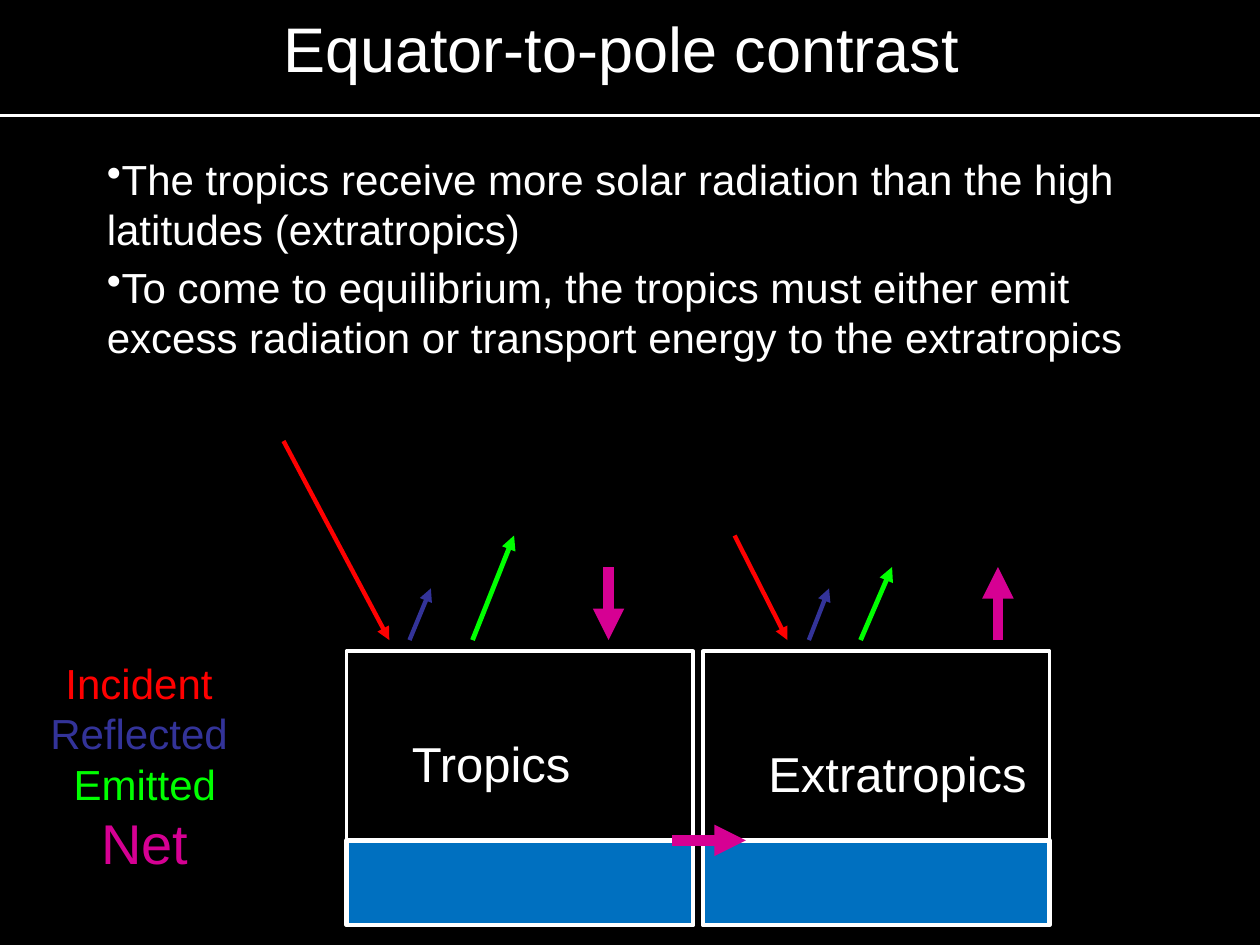
from lxml import etree
from pptx import Presentation, util as u
from pptx.dml.color import RGBColor
from pptx.enum import shapes, text
from pptx.oxml.ns import qn

COLORS = {
    "background": "000000", "white": "FFFFFF", "ocean": "0070C0",
    "incident": "FF0000", "reflected": "333399", "emitted": "00FF00", "net": "D60093",
}
FONT = "Arial"


def rgb(name):
    return RGBColor.from_string(COLORS[name])


def add_text(page, box, lines, align=text.PP_ALIGN.LEFT, anchor=text.MSO_ANCHOR.TOP,
             wrap=True, gap=0, bullet=None):
    """Place lines given as (wording, size, color) in the box."""
    frame = page.shapes.add_textbox(*map(u.Inches, box)).text_frame
    frame.word_wrap = wrap
    frame.vertical_anchor = anchor
    for index, (wording, size, color) in enumerate(lines):
        para = frame.add_paragraph() if index else frame.paragraphs[0]
        if bullet:
            props = para._p.get_or_add_pPr()
            props.set("marL", "0")
            props.set("indent", "0")
            etree.SubElement(props, qn("a:buChar")).set("char", bullet)
        para.alignment = align
        para.space_before = u.Pt(gap if index else 0)
        span = para.add_run()
        span.text = wording
        span.font.name = FONT
        span.font.size = u.Pt(size)
        span.font.color.rgb = rgb(color)


def add_line(page, start, end, color, width, arrow=True):
    line = page.shapes.add_connector(shapes.MSO_CONNECTOR.STRAIGHT,
                                     *map(u.Inches, (*start, *end)))
    line.line.color.rgb = rgb(color)
    line.line.width = u.Pt(width)
    if arrow:
        etree.SubElement(line.line._get_or_add_ln(), qn("a:tailEnd")).set("type", "triangle")
    etree.SubElement(line._element.spPr, qn("a:effectLst"))


def add_block(page, kind, box, fill, width):
    block = page.shapes.add_shape(kind, *map(u.Inches, box))
    block.shadow.inherit = False
    block.fill.solid()
    block.fill.fore_color.rgb = rgb(fill)
    block.line.color.rgb = rgb("white")
    block.line.width = u.Pt(width)


def add_header(page, box):
    add_text(page, box, [("Equator-to-pole contrast ", 36, "white")],
             text.PP_ALIGN.CENTER, text.MSO_ANCHOR.MIDDLE)
    add_line(page, (0, 0.92), (10, 0.92), "white", 1.75, arrow=False)


def add_points(page, box):
    points = (
        "The tropics receive more solar radiation than the high latitudes (extratropics)",
        "To come to equilibrium, the tropics must either emit excess radiation "
        "or transport energy to the extratropics",
    )
    add_text(page, box, [(point, 24, "white") for point in points], gap=4, bullet="•")


def add_region(page, box, label, label_at, arrows):
    """Draw one zone: atmosphere, ocean layer, label and the fluxes above it."""
    left, top, width, height = box
    ocean_height = 0.67
    add_block(page, shapes.MSO_SHAPE.RECTANGLE, box, "background", 2.25)
    add_block(page, shapes.MSO_SHAPE.FLOWCHART_PROCESS,
              (left, top + height - ocean_height, width, ocean_height), "ocean", 2.5)
    add_text(page, (left + label_at[0], top + label_at[1], 2.33, 0.57),
             [(label, 28, "white")])
    for color, line_width, start, end in arrows:
        add_line(page, start, end, color, line_width)


def add_legend(page, box):
    add_text(page, box, [
        ("Incident ", 24, "incident"),
        ("Reflected ", 24, "reflected"),
        ("Emitted", 24, "emitted"),
        ("Net", 32, "net"),
    ], text.PP_ALIGN.CENTER, wrap=False)


def main():
    deck = Presentation()
    deck.slide_width, deck.slide_height = u.Inches(10), u.Inches(7.5)
    page = deck.slides.add_slide(deck.slide_layouts[6])
    page.background.fill.solid()
    page.background.fill.fore_color.rgb = rgb("background")

    add_header(page, (0.5, -0.25, 9, 1.25))
    add_points(page, (0.75, 1.17, 8.5, 2.16))

    # Two zones with their radiation fluxes, which start or end just above the box
    base = 5.08
    add_region(page, (2.75, 5.17, 2.75, 2.17), "Tropics", (0.42, 0.6), [
        ("incident", 2.5, (2.25, 3.5), (3.09, base)),
        ("reflected", 2.5, (3.25, base), (3.42, 4.67)),
        ("emitted", 2.75, (3.75, base), (4.08, 4.25)),
        ("net", 6, (4.83, 4.5), (4.83, base)),
    ])
    add_region(page, (5.58, 5.17, 2.75, 2.17), "Extratropics", (0.42, 0.68), [
        ("incident", 2.5, (5.83, 4.25), (6.25, base)),
        ("reflected", 2.5, (6.42, base), (6.58, 4.67)),
        ("emitted", 2.75, (6.83, base), (7.08, 4.5)),
        ("net", 6, (7.92, base), (7.92, 4.5)),
    ])

    # Energy transport between the zones
    add_line(page, (5.33, 6.67), (5.92, 6.67), "net", 6)
    add_legend(page, (0.3, 5.17, 1.7, 1.83))
    deck.save("out.pptx")


if __name__ == "__main__":
    main()
